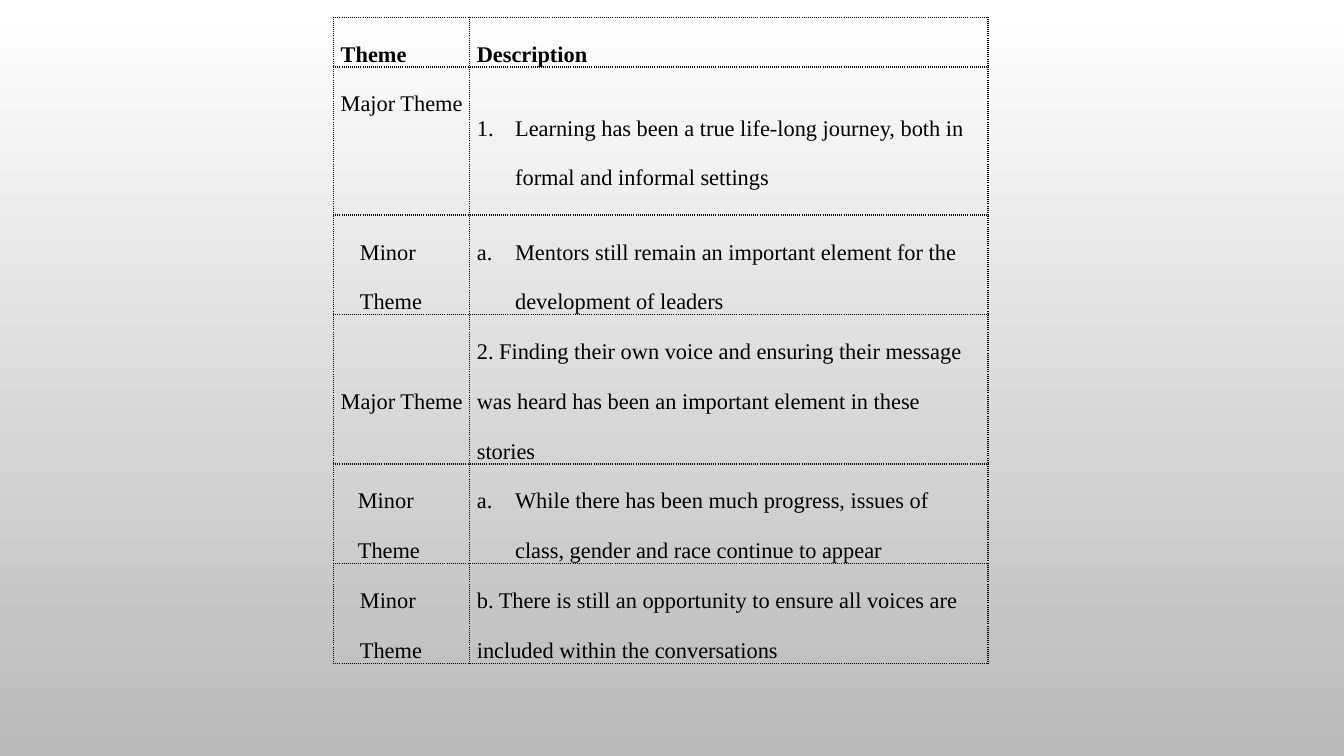
"""Build a slide with a table of major and minor leadership themes."""
import pptx
import pptx.dml.color
import pptx.enum.text
import pptx.oxml
import pptx.oxml.ns
import pptx.util

BLACK = pptx.dml.color.RGBColor(0x00, 0x00, 0x00)
WHITE = pptx.dml.color.RGBColor(0xFF, 0xFF, 0xFF)
GREY = pptx.dml.color.RGBColor(0xB9, 0xB9, 0xB9)
Inches = pptx.util.Inches
MIDDLE = pptx.enum.text.MSO_ANCHOR.MIDDLE
TOP = pptx.enum.text.MSO_ANCHOR.TOP
LINE_HEIGHT = 0.49
COLUMN_WIDTHS = [1.35, 5.14]
HANGING = 0.38
NUMBER, LETTER = "arabicPeriod", "alphaLcPeriod"

ROWS = [
    (1, "Theme", 0, MIDDLE, "Description", None),
    (3, "Major Theme", 0, TOP,
     "Learning has been a true life-long journey, both in formal and informal settings", NUMBER),
    (2, "Minor Theme", 0.19, MIDDLE,
     "Mentors still remain an important element for the development of leaders", LETTER),
    (3, "Major Theme", 0, MIDDLE,
     "2. Finding their own voice and ensuring their message was heard has been "
     "an important element in these stories", None),
    (2, "Minor Theme", 0.17, MIDDLE,
     "While there has been much progress, issues of class, gender and race continue to appear", LETTER),
    (2, "Minor Theme", 0.19, MIDDLE,
     "b. There is still an opportunity to ensure all voices are included within the conversations", None),
]


def add_borders(cell):
    """Give all four sides of a cell a dotted line."""
    properties = cell._tc.get_or_add_tcPr()
    for position, side in enumerate(["lnL", "lnR", "lnT", "lnB"]):
        border = pptx.oxml.parse_xml(
            f'<a:{side} {pptx.oxml.ns.nsdecls("a")} w="{pptx.util.Pt(1)}">'
            f'<a:solidFill><a:srgbClr val="{BLACK}"/></a:solidFill>'
            f'<a:prstDash val="sysDot"/></a:{side}>')
        properties.insert(position, border)


def write_cell(cell, text, anchor, indent, numbering, bold):
    """Fill a cell with one double-spaced paragraph."""
    cell_format = {"vertical_anchor": anchor, "margin_left": Inches(0.07),
                   "margin_right": Inches(0.07), "margin_top": 0, "margin_bottom": 0}
    for name, value in cell_format.items():
        setattr(cell, name, value)
    cell.fill.background()
    add_borders(cell)
    para = cell.text_frame.paragraphs[0]
    para.line_spacing = 2.0
    properties = para._p.get_or_add_pPr()
    properties.set("marL", str(Inches(indent)))
    if numbering:
        properties.set("indent", str(-Inches(indent)))
        properties.append(pptx.oxml.parse_xml(
            f'<a:buAutoNum {pptx.oxml.ns.nsdecls("a")} type="{numbering}"/>'))
    span = para.add_run()
    span.text = text
    font_format = {"name": "Times New Roman", "size": pptx.util.Pt(16), "bold": bold}
    for name, value in font_format.items():
        setattr(span.font, name, value)
    span.font.color.rgb = BLACK


deck = pptx.Presentation()
deck.slide_width, deck.slide_height = Inches(13.33), Inches(7.5)
page = deck.slides.add_slide(deck.slide_layouts[6])

backdrop = page.background.fill
backdrop.gradient()
backdrop.gradient_angle = 270
for stop, position, color in zip(backdrop.gradient_stops, [0, 1], [WHITE, GREY]):
    stop.position = position
    stop.color.rgb = color

line_count = sum(row[0] for row in ROWS)
frame = page.shapes.add_table(len(ROWS), len(COLUMN_WIDTHS), Inches(3.31), Inches(0.17),
                              Inches(sum(COLUMN_WIDTHS)), Inches(LINE_HEIGHT * line_count))
themes = frame.table
themes.horz_banding = False
for column, width in zip(themes.columns, COLUMN_WIDTHS):
    column.width = Inches(width)

for index, (lines, theme, indent, anchor, description, numbering) in enumerate(ROWS):
    themes.rows[index].height = Inches(LINE_HEIGHT * lines)
    header = index == 0
    write_cell(themes.cell(index, 0), theme, anchor, indent, None, header)
    write_cell(themes.cell(index, 1), description, MIDDLE,
               HANGING if numbering else 0, numbering, header)

deck.save("out.pptx")
